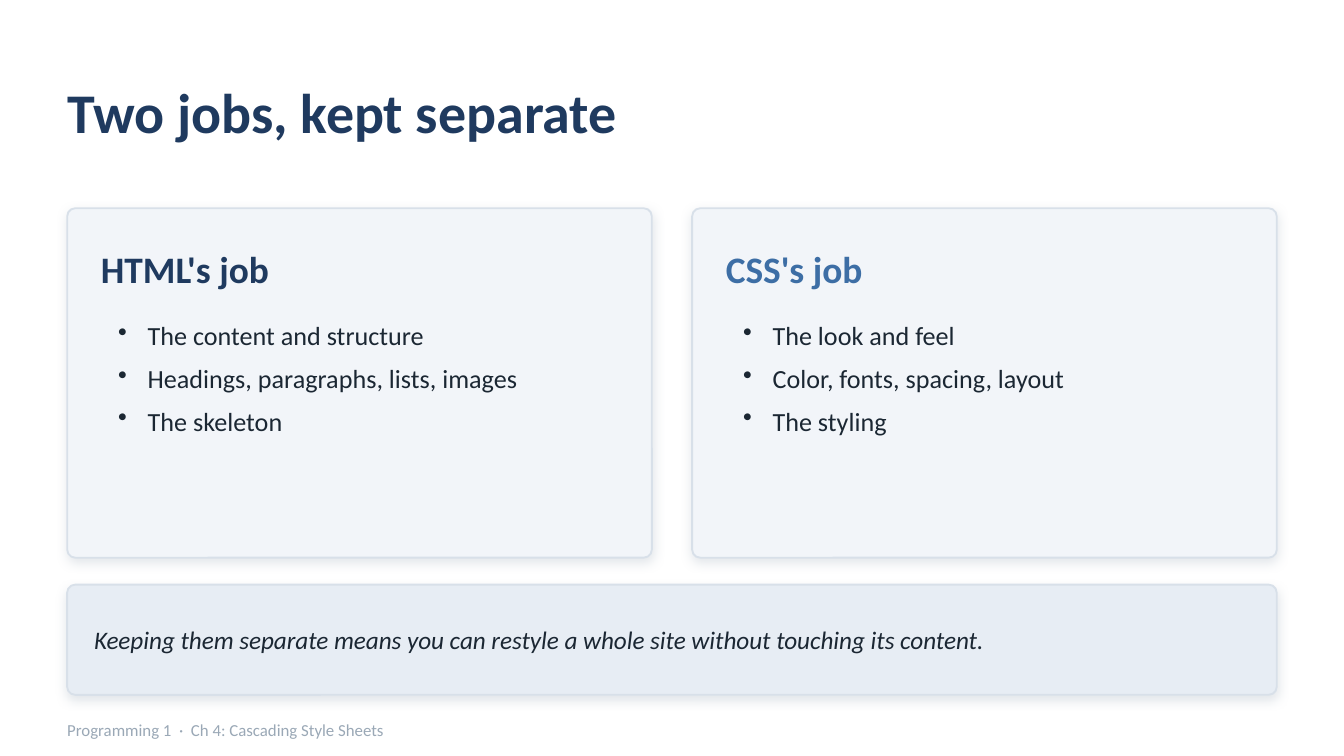
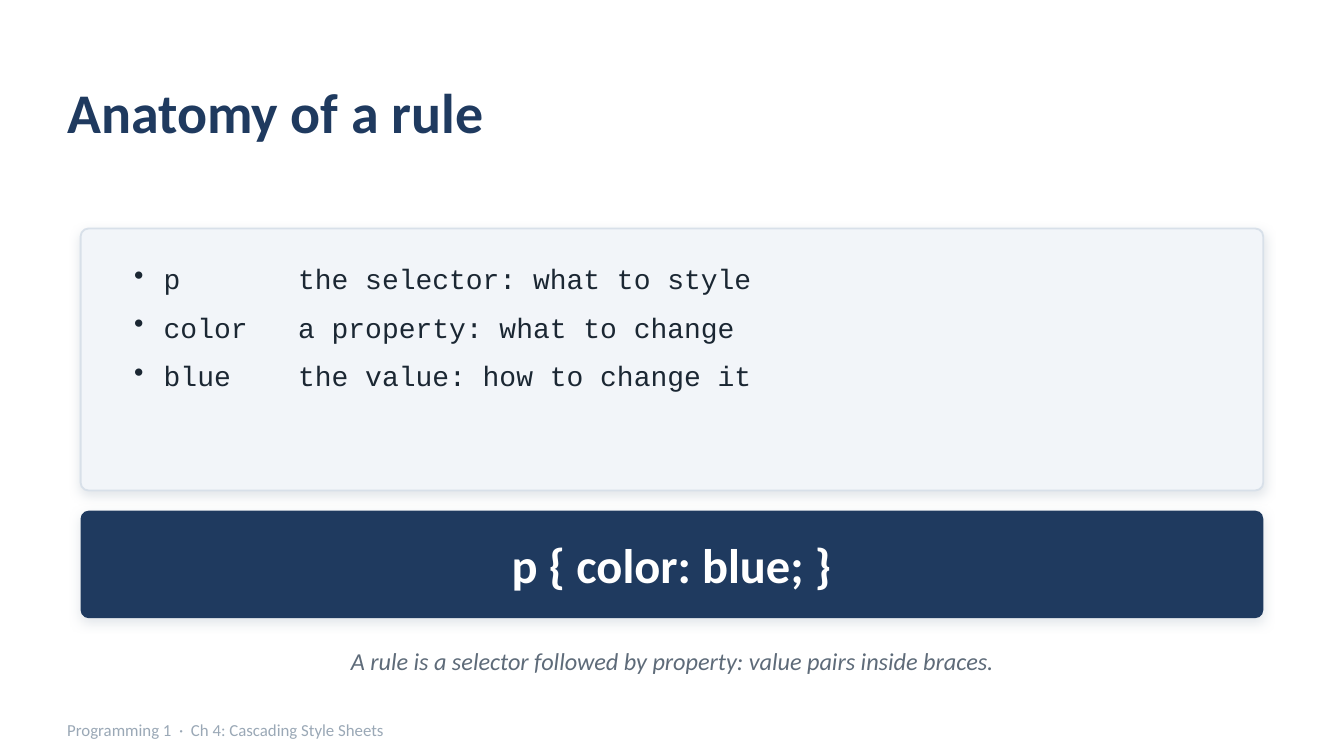
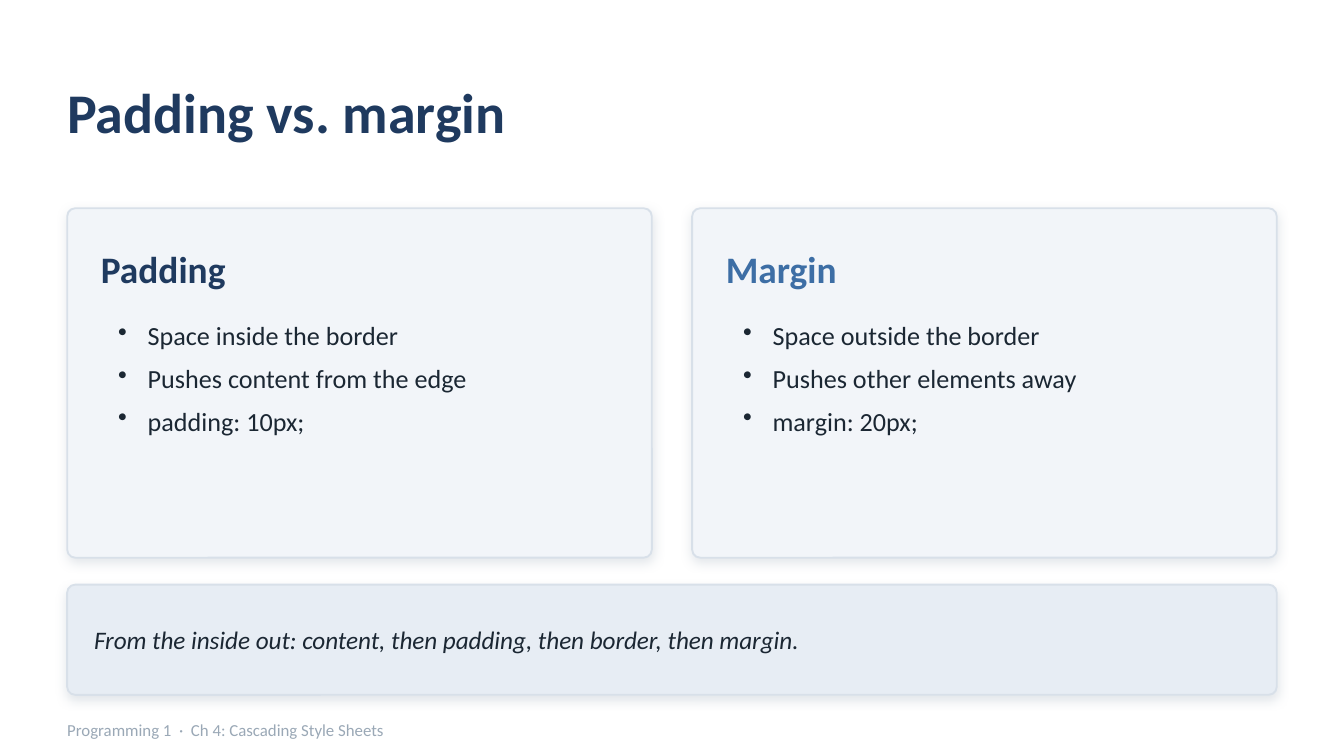
"""Builds three slides on style sheets: two comparisons and one rule."""
from dataclasses import dataclass

from pptx import Presentation
from pptx.dml.color import RGBColor
from pptx.enum.shapes import MSO_SHAPE as Shape
from pptx.enum.text import MSO_ANCHOR as Anchor, MSO_AUTO_SIZE as Fit, PP_ALIGN as Align
from pptx.oxml import parse_xml
from pptx.oxml.ns import nsdecls, qn
from pptx.util import Inches, Pt

NAVY, BLUE, INK = "1F3A5F", "3D6EA5", "1B2733"
GREY, MIST, WHITE = "5E6B79", "9AA8B6", "FFFFFF"
PALE, TINT, EDGE = "F2F5F9", "E7EDF4", "D8E0E9"
SANS, MONO = "Calibri", "Courier New"
LEFT, WIDE, GAP = 0.5, 9, 0.3
CARD = (WIDE - GAP) / 2
ROUND = 0.06
HANG = 0.22
FOOTER = "Programming 1  ·  Ch 4: Cascading Style Sheets"


@dataclass(frozen=True)
class Box:
    left: float
    top: float
    width: float
    height: float


@dataclass(frozen=True)
class Card:
    head: str
    hue: str
    points: tuple[str, ...]


@dataclass(frozen=True)
class Pair:
    title: str
    cards: tuple[Card, Card]
    note: str


JOBS = Pair(
    "Two jobs, kept separate",
    (
        Card("HTML's job", NAVY, ("The content and structure",
                                  "Headings, paragraphs, lists, images", "The skeleton")),
        Card("CSS's job", BLUE, ("The look and feel",
                                 "Color, fonts, spacing, layout", "The styling")),
    ),
    "Keeping them separate means you can restyle a whole site without touching its content.",
)
SPACE = Pair(
    "Padding vs. margin",
    (
        Card("Padding", NAVY, ("Space inside the border",
                               "Pushes content from the edge", "padding: 10px;")),
        Card("Margin", BLUE, ("Space outside the border",
                              "Pushes other elements away", "margin: 20px;")),
    ),
    "From the inside out: content, then padding, then border, then margin.",
)
PARTS = (
    "p\tthe selector: what to style",
    "color\ta property: what to change",
    "blue\tthe value: how to change it",
)


def paint(target, hue: str) -> None:
    target.rgb = RGBColor.from_string(hue)


def place(shape, box: Box) -> None:
    shape.left, shape.top = Inches(box.left), Inches(box.top)
    shape.width, shape.height = Inches(box.width), Inches(box.height)


def add_dot(para, tab: float) -> None:
    props = para._p.get_or_add_pPr()
    props.set("marL", str(Inches(HANG)))
    props.set("indent", str(-Inches(HANG)))
    props.append(parse_xml(f'<a:buChar {nsdecls("a")} char="•"/>'))
    if tab:
        props.append(parse_xml(
            f'<a:tabLst {nsdecls("a")}><a:tab pos="{Inches(tab)}" algn="l"/></a:tabLst>'))


def write(shape, *lines: str, size: float, hue: str = INK, face: str = SANS,
          bold: bool = False, slant: bool = False, align=Align.LEFT,
          dots: bool = False, after: float = 0, tab: float = 0) -> None:
    frame = shape.text_frame
    frame.word_wrap, frame.auto_size = True, Fit.NONE
    frame.vertical_anchor = Anchor.TOP if dots else Anchor.MIDDLE
    if not dots:
        frame.margin_left = frame.margin_right = frame.margin_top = frame.margin_bottom = 0
    for rank, line in enumerate(lines):
        para = frame.add_paragraph() if rank else frame.paragraphs[0]
        if dots:
            add_dot(para, tab)
        para.alignment, para.space_after = align, Pt(after)
        run = para.add_run()
        run.text = line
        font = run.font
        font.name, font.size, font.bold, font.italic = face, Pt(size), bold, slant
        paint(font.color, hue)


def add_text(slide, box: Box, *lines: str, **form) -> None:
    shape = slide.shapes.add_textbox(0, 0, 0, 0)
    place(shape, box)
    write(shape, *lines, **form)


def add_panel(slide, box: Box, fill: str, edge: str = EDGE) -> None:
    panel = slide.shapes.add_shape(Shape.ROUNDED_RECTANGLE, 0, 0, 0, 0)
    place(panel, box)
    panel.adjustments[0] = ROUND / min(box.width, box.height)
    panel.fill.solid()
    paint(panel.fill.fore_color, fill)
    if edge:
        paint(panel.line.color, edge)
        panel.line.width = Pt(1)
    else:
        panel.line.fill.background()
    panel.shadow.inherit = False
    panel.element.spPr.find(qn("a:effectLst")).append(parse_xml(
        f'<a:outerShdw {nsdecls("a")} blurRad="{Pt(6)}" dist="{Pt(2)}" dir="5400000" '
        f'algn="bl" rotWithShape="0"><a:srgbClr val="{MIST}">'
        '<a:alpha val="28000"/></a:srgbClr></a:outerShdw>'))


def add_slide(deck, title: str):
    slide = deck.slides.add_slide(deck.slide_layouts[5])
    place(slide.shapes.title, Box(LEFT, 0.4, WIDE, 0.85))
    write(slide.shapes.title, title, size=30, hue=NAVY, bold=True)
    return slide


def add_foot(slide) -> None:
    add_text(slide, Box(LEFT, 5.3, 8, 0.26), FOOTER, size=9, hue=MIST)


def draw_pair(deck, pair: Pair) -> None:
    slide = add_slide(deck, pair.title)
    for rank, card in enumerate(pair.cards):
        left = LEFT + rank * (CARD + GAP)
        add_panel(slide, Box(left, 1.55, CARD, 2.6), PALE)
        add_text(slide, Box(left + 0.25, 1.75, CARD - 0.5, 0.5), card.head,
                 size=20, hue=card.hue, bold=True)
        add_text(slide, Box(left + 0.28, 2.33, CARD - 0.5, 1.6), *card.points,
                 size=14, dots=True, after=6)
    add_panel(slide, Box(LEFT, 4.35, WIDE, 0.82), TINT)
    add_text(slide, Box(LEFT + 0.2, 4.4, WIDE - 0.4, 0.72), pair.note, size=13.5, slant=True)
    add_foot(slide)


def draw_rule(deck) -> None:
    slide = add_slide(deck, "Anatomy of a rule")
    left, width = 0.6, 8.8
    add_panel(slide, Box(left, 1.7, width, 1.95), PALE)
    add_text(slide, Box(left + 0.3, 1.9, width - 0.6, 1.6), *PARTS,
             size=15, face=MONO, dots=True, after=8, tab=1.22)
    add_panel(slide, Box(left, 3.8, width, 0.8), NAVY, edge="")
    add_text(slide, Box(left, 3.83, width, 0.74), "p { color: blue; }",
             size=26, hue=WHITE, bold=True, align=Align.CENTER)
    add_text(slide, Box(left, 4.72, width, 0.4),
             "A rule is a selector followed by property: value pairs inside braces.",
             size=13, hue=GREY, slant=True, align=Align.CENTER)
    add_foot(slide)


def main() -> None:
    deck = Presentation()
    deck.slide_width, deck.slide_height = Inches(10), Inches(10) * 9 // 16
    draw_pair(deck, JOBS)
    draw_rule(deck)
    draw_pair(deck, SPACE)
    deck.save("out.pptx")


if __name__ == "__main__":
    main()
